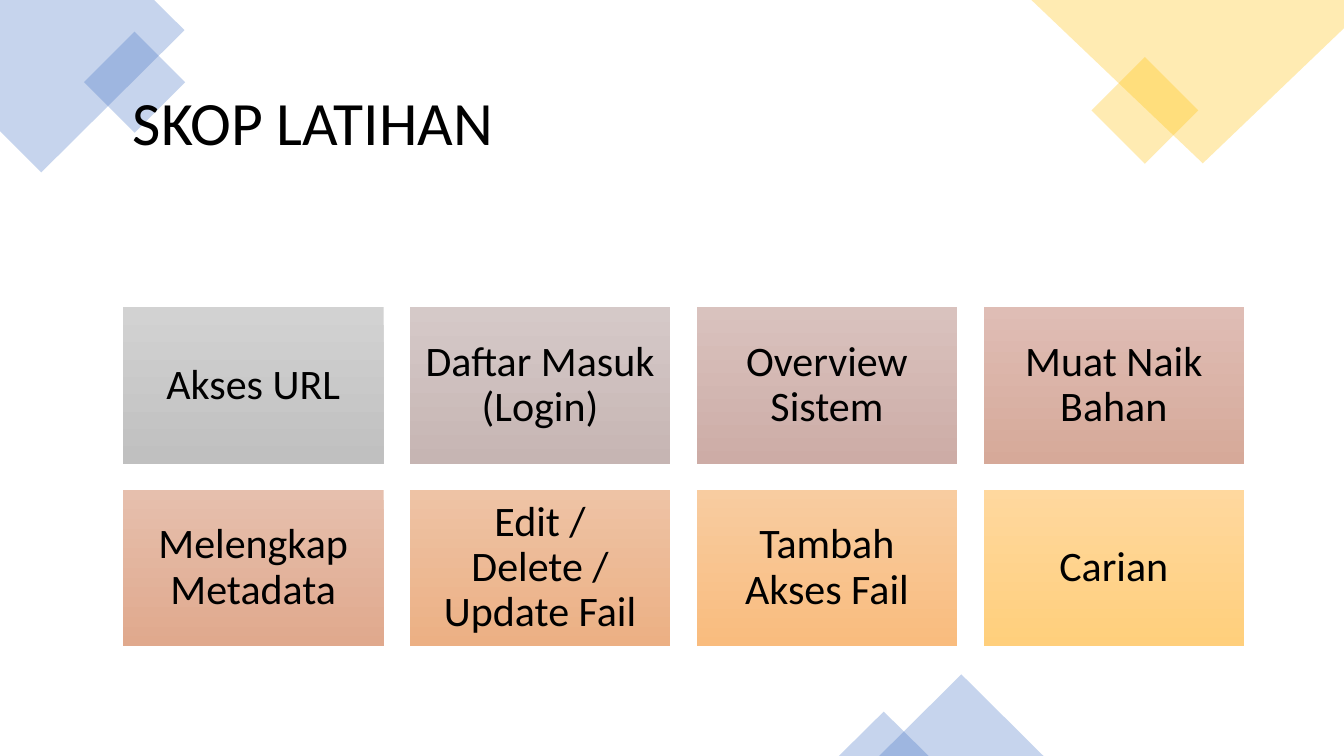
from lxml.etree import SubElement
from pptx import Presentation
from pptx.dml.color import RGBColor
from pptx.enum.shapes import MSO_SHAPE
from pptx.enum.text import MSO_ANCHOR, PP_ALIGN
from pptx.oxml.ns import qn
from pptx.util import Inches, Pt

BLACK = RGBColor(0x00, 0x00, 0x00)
BLUE = RGBColor(0x44, 0x72, 0xC4)
GOLD = RGBColor(0xFF, 0xC0, 0x00)

# Training topics: label, gradient top, gradient bottom
TOPICS = [
    ("Akses URL", RGBColor(0xD2, 0xD2, 0xD2), RGBColor(0xC0, 0xC0, 0xC0)),
    ("Daftar Masuk (Login)", RGBColor(0xD5, 0xC9, 0xC8), RGBColor(0xC6, 0xB5, 0xB3)),
    ("Overview Sistem", RGBColor(0xD9, 0xC2, 0xBE), RGBColor(0xCD, 0xAC, 0xA6)),
    ("Muat Naik Bahan", RGBColor(0xDF, 0xBD, 0xB5), RGBColor(0xD6, 0xA9, 0x99)),
    ("Melengkap Metadata", RGBColor(0xE6, 0xBF, 0xAD), RGBColor(0xE0, 0xA9, 0x8D)),
    ("Edit / Delete / Update Fail", RGBColor(0xEE, 0xC3, 0xA5), RGBColor(0xEC, 0xB0, 0x84)),
    ("Tambah Akses Fail", RGBColor(0xF8, 0xCC, 0xA0), RGBColor(0xF9, 0xBC, 0x7E)),
    ("Carian", RGBColor(0xFF, 0xD8, 0x9E), RGBColor(0xFF, 0xCF, 0x7C)),
]


def make_translucent(shape, color):
    """Fill a decoration with 30 % of a colour, without outline or shadow."""
    shape.shadow.inherit = False
    shape.line.fill.background()
    shape.fill.solid()
    shape.fill.fore_color.rgb = color
    color_element = shape._element.spPr.find(qn("a:solidFill"))[0]
    SubElement(color_element, qn("a:alpha"), val="30000")


def write_text(shape, text, size, alignment, margin):
    frame = shape.text_frame
    frame.word_wrap = True
    frame.vertical_anchor = MSO_ANCHOR.MIDDLE
    frame.margin_left = frame.margin_right = Inches(margin)
    frame.margin_top = frame.margin_bottom = Inches(margin)
    paragraph = frame.paragraphs[0]
    paragraph.alignment = alignment
    paragraph.line_spacing = 0.9
    run = paragraph.add_run()
    run.text = text
    run.font.name = "Calibri"
    run.font.size = Pt(size)
    run.font.color.rgb = BLACK


presentation = Presentation()
presentation.slide_width = Inches(13.33)
presentation.slide_height = Inches(7.5)
slide = presentation.slides.add_slide(presentation.slide_layouts[6])

# Large corner diamonds, cut off at the slide edges
corners = [
    (BLUE, [(0, 0), (1.53, 0), (1.83, 0.3), (0.41, 1.71), (0, 1.3)]),
    (GOLD, [(10.23, 0), (13.33, 0), (13.33, 0.28), (11.93, 1.62)]),
]
for color, points in corners:
    outline = [(Inches(x), Inches(y)) for x, y in points]
    builder = slide.shapes.build_freeform(*outline[0])
    builder.add_line_segments(outline[1:], close=True)
    make_translucent(builder.convert_to_shape(), color)

# Small corner diamonds and the triangles on the bottom edge
decorations = [
    (MSO_SHAPE.RECTANGLE, 0.98, 0.46, 0.71, 0.71, 315, BLUE),
    (MSO_SHAPE.RECTANGLE, 10.98, 0.72, 0.75, 0.75, 315, GOLD),
    (MSO_SHAPE.ISOSCELES_TRIANGLE, 8.72, 6.69, 1.63, 0.81, 0, BLUE),
    (MSO_SHAPE.ISOSCELES_TRIANGLE, 8.32, 7.06, 0.89, 0.44, 0, BLUE),
]
for kind, left, top, width, height, rotation, color in decorations:
    shape = slide.shapes.add_shape(
        kind, Inches(left), Inches(top), Inches(width), Inches(height))
    shape.rotation = rotation
    make_translucent(shape, color)

# Title
content_left, content_width = Inches(1.22), Inches(11.12)
title = slide.shapes.add_textbox(
    content_left, Inches(0.6), content_width, Inches(1.29))
write_text(title, "SKOP LATIHAN", 44, PP_ALIGN.LEFT, 0.1)

# Grid of topics
columns = 4
gap = Inches(0.26)
grid_top = Inches(3.05)
tile_width = (content_width - (columns - 1) * gap) // columns
tile_height = Inches(1.55)
for index, (label, top_color, bottom_color) in enumerate(TOPICS):
    row, column = divmod(index, columns)
    tile = slide.shapes.add_shape(
        MSO_SHAPE.RECTANGLE,
        content_left + column * (tile_width + gap),
        grid_top + row * (tile_height + gap),
        tile_width, tile_height)
    tile.shadow.inherit = False
    tile.line.fill.background()
    tile.fill.gradient()
    tile.fill.gradient_angle = 270
    for stop, color in zip(tile.fill.gradient_stops, (top_color, bottom_color)):
        stop.color.rgb = color
    write_text(tile, label, 30, PP_ALIGN.CENTER, 0.12)

presentation.save("out.pptx")
